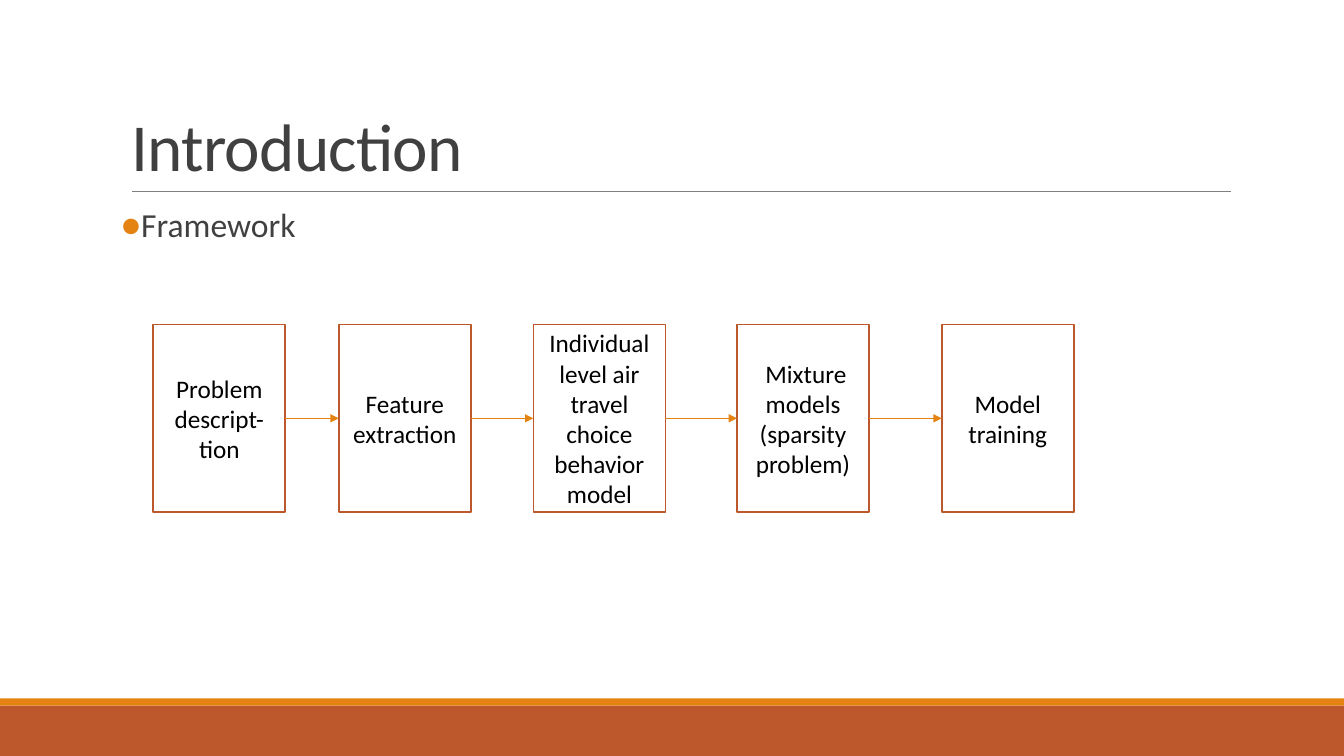
from dataclasses import dataclass
from itertools import pairwise

from lxml.etree import SubElement
from pptx import Presentation
from pptx.dml.color import RGBColor
from pptx.enum.shapes import MSO_CONNECTOR, MSO_SHAPE
from pptx.enum.text import MSO_ANCHOR, MSO_AUTO_SIZE, PP_ALIGN
from pptx.oxml.ns import qn
from pptx.util import Inches, Pt

ORANGE, RUST, DARK = "E48312", "BD582C", "404040"
BOX_TOP, BOX_W, BOX_H = 3.22, 1.31, 1.86


@dataclass
class Step:
    """One stage of the framework."""
    left: float
    text: str


STEPS = [
    Step(1.52, "Problem descript-tion"),
    Step(3.36, "Feature extraction"),
    Step(5.29, "Individual level air travel choice behavior model"),
    Step(7.31, " Mixture models\n(sparsity problem)"),
    Step(9.34, "Model training"),
]


def rgb(color: str) -> RGBColor:
    """Turn a hex string into a colour."""
    return RGBColor.from_string(color)


def write(tf, text: str, *, size: float, color: str, align=PP_ALIGN.LEFT,
          anchor=MSO_ANCHOR.TOP, line: float = 1.0, before: float = 0,
          after: float = 0, spacing: int = 0) -> None:
    """Fill a text frame, one paragraph for each line of text."""
    tf.word_wrap = True
    tf.auto_size = MSO_AUTO_SIZE.NONE
    tf.vertical_anchor = anchor
    for i, part in enumerate(text.split("\n")):
        p = tf.add_paragraph() if i else tf.paragraphs[0]
        p.alignment = align
        p.line_spacing = line
        p.space_before, p.space_after = Pt(before), Pt(after)
        r = p.add_run()
        r.text = part
        r.font.name, r.font.size = "Calibri", Pt(size)
        r.font.color.rgb = rgb(color)
        if spacing:
            r._r.get_or_add_rPr().set("spc", str(spacing))


def add_bullet(p, char: str, color: str, indent: float) -> None:
    """Give a paragraph a coloured bullet with a hanging indent."""
    pPr = p._p.get_or_add_pPr()
    pPr.set("marL", str(Inches(indent)))
    pPr.set("indent", str(-Inches(indent)))
    SubElement(SubElement(pPr, qn("a:buClr")), qn("a:srgbClr"), val=color)
    SubElement(pPr, qn("a:buFont"), typeface="Calibri")
    SubElement(pPr, qn("a:buChar"), char=char)


def add_rect(s, left: float, top: float, width: float, height: float,
             fill: str, border: str | None = None):
    """Draw a filled rectangle with an optional border."""
    sp = s.shapes.add_shape(MSO_SHAPE.RECTANGLE, Inches(left), Inches(top),
                            Inches(width), Inches(height))
    sp.shadow.inherit = False
    sp.fill.solid()
    sp.fill.fore_color.rgb = rgb(fill)
    if border:
        sp.line.color.rgb = rgb(border)
        sp.line.width = Pt(1.25)
    else:
        sp.line.fill.background()
    return sp


def add_line(s, x1: float, x2: float, y: float, color: str, width: float):
    """Draw a horizontal line without a shadow."""
    c = s.shapes.add_connector(MSO_CONNECTOR.STRAIGHT, Inches(x1), Inches(y),
                               Inches(x2), Inches(y))
    c.line.color.rgb = rgb(color)
    c.line.width = Pt(width)
    SubElement(c._element.spPr, qn("a:effectLst"))
    return c


def add_heading(s) -> None:
    """Format the title and write the framework bullet."""
    title = s.shapes.title
    title.left, title.top = Inches(1.2), Inches(0.3)
    title.width, title.height = Inches(11), Inches(1.59)
    write(title.text_frame, "Introduction", size=48, color=DARK,
          anchor=MSO_ANCHOR.BOTTOM, line=0.85, spacing=-50)
    body = s.shapes.add_textbox(Inches(1.2), Inches(2.02), Inches(11), Inches(4.4))
    tf = body.text_frame
    tf.margin_left = tf.margin_right = 0
    write(tf, "Framework", size=24, color=DARK, line=0.9, before=12, after=2)
    add_bullet(tf.paragraphs[0], "●", ORANGE, 0.1)


def add_flow(s) -> None:
    """Draw the steps and the arrows that join them."""
    boxes = []
    for step in STEPS:
        sp = add_rect(s, step.left, BOX_TOP, BOX_W, BOX_H, "FFFFFF", RUST)
        write(sp.text_frame, step.text, size=18, color="000000",
              align=PP_ALIGN.CENTER, anchor=MSO_ANCHOR.MIDDLE)
        boxes.append(sp)
    for (a, b), (start, end) in zip(pairwise(STEPS), pairwise(boxes)):
        c = add_line(s, a.left + BOX_W, b.left, BOX_TOP + BOX_H / 2, ORANGE, 1)
        c.begin_connect(start, 3)
        c.end_connect(end, 1)
        SubElement(c.line._get_or_add_ln(), qn("a:tailEnd"), type="triangle")


def main() -> None:
    """Build and save the slide."""
    prs = Presentation()
    prs.slide_width, prs.slide_height = Inches(13.33), Inches(7.5)
    s = prs.slides.add_slide(prs.slide_layouts[5])
    add_rect(s, 0, 7, 13.33, 0.5, RUST)
    add_rect(s, 0, 6.93, 13.33, 0.07, ORANGE)
    add_line(s, 1.31, 12.21, 1.9, "808080", 0.5)
    add_heading(s)
    add_flow(s)
    prs.save("out.pptx")


if __name__ == "__main__":
    main()
